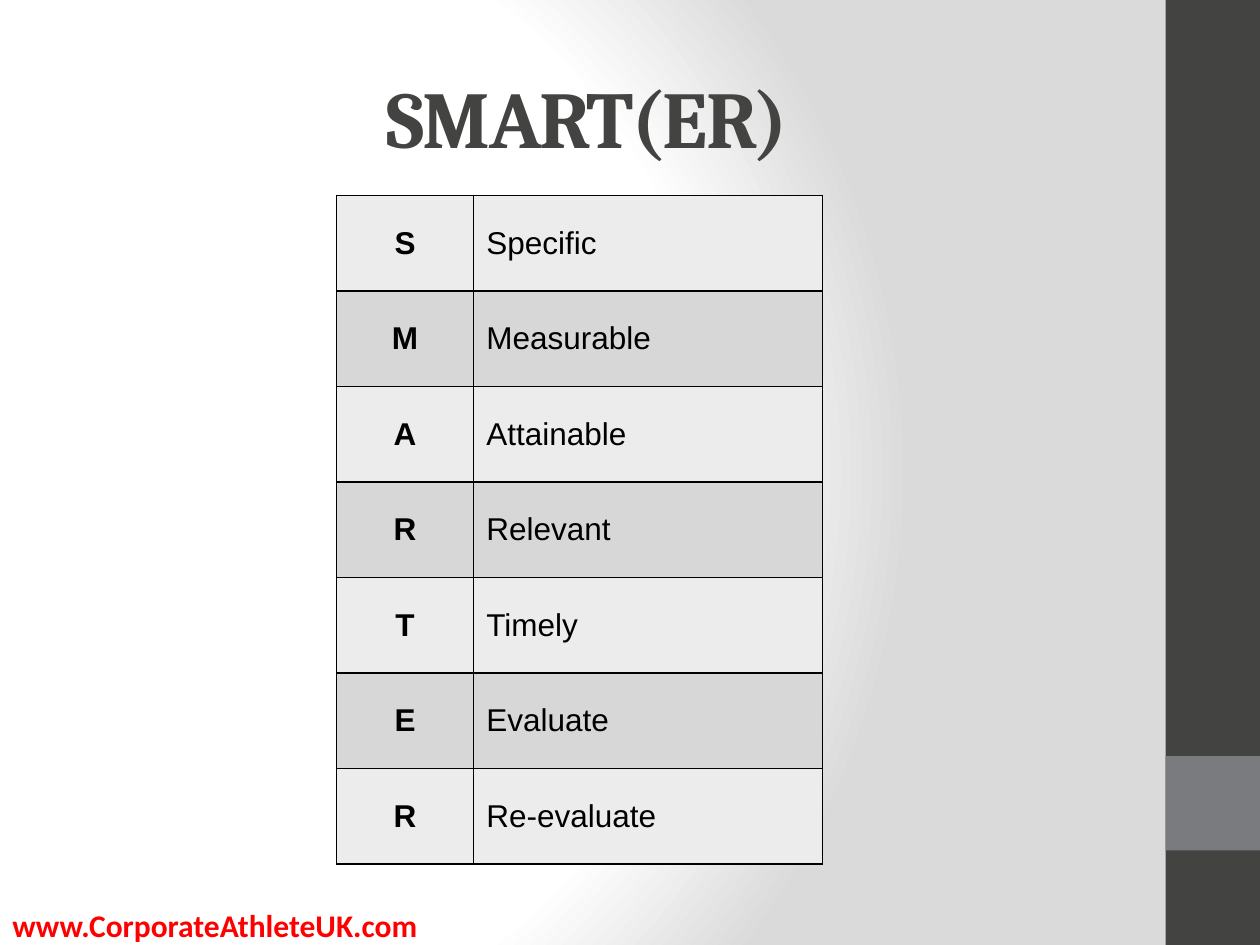
from pptx import Presentation
from pptx.dml.color import RGBColor
from pptx.enum.shapes import MSO_SHAPE
from pptx.enum.text import MSO_ANCHOR, PP_ALIGN
from pptx.oxml import parse_xml
from pptx.oxml.ns import nsdecls, qn
from pptx.util import Inches, Pt

RECT = MSO_SHAPE.RECTANGLE
MIDDLE, TOP = MSO_ANCHOR.MIDDLE, MSO_ANCHOR.TOP
LEFT, CENTER = PP_ALIGN.LEFT, PP_ALIGN.CENTER

TITLE = "SMART(ER)"
SITE = "www.CorporateAthleteUK.com"
STEPS = [
    ("S", "Specific"),
    ("M", "Measurable"),
    ("A", "Attainable"),
    ("R", "Relevant"),
    ("T", "Timely"),
    ("E", "Evaluate"),
    ("R", "Re-evaluate"),
]

WIDE, HIGH = 10, 7.5
UNIT = HIGH / 10
GRID = {"left": 2.67, "top": 1.55, "cols": (1.09, 2.77), "row": 5.31 / len(STEPS)}

THEME = {
    "fade": [(0, "FFFFFF"), (75, "FFFFFF"), (100, "DADADA")],
    "bar": "434342",
    "block": "797B7E",
    "bands": ("ECECEC", "D7D7D8"),
    "line": "000000",
    "title": {"name": "Cambria", "size": Pt(46), "bold": True, "color": "434342"},
    "site": {"name": "Calibri", "size": Pt(18), "bold": True, "color": "FF0000"},
    "key": {"name": "Arial", "size": Pt(18), "bold": True, "color": "000000"},
    "word": {"name": "Arial", "size": Pt(18), "bold": False, "color": "000000"},
}


def rgb(code):
    return RGBColor.from_string(code)


def write(frame, text, style, align=LEFT):
    para = frame.paragraphs[0]
    para.alignment = align
    run = para.add_run()
    run.text = text
    for key, value in THEME[style].items():
        if key == "color":
            run.font.color.rgb = rgb(value)
        else:
            setattr(run.font, key, value)
    return run


def add_text(slide, area, text, style, align=LEFT, anchor=TOP):
    frame = slide.shapes.add_textbox(*map(Inches, area)).text_frame
    frame.word_wrap = True
    frame.vertical_anchor = anchor
    return write(frame, text, style, align)


def add_block(slide, area, color):
    block = slide.shapes.add_shape(RECT, *map(Inches, area))
    block.shadow.inherit = False
    block.fill.solid()
    block.fill.fore_color.rgb = rgb(color)
    block.line.fill.background()


def fade_back(slide):
    """Give the slide a round gradient centred left of its middle."""
    slide.background.fill.gradient()
    old = slide.element.find(".//" + qn("a:gradFill"))
    stops = "".join(
        f'<a:gs pos="{pos * 1000}"><a:srgbClr val="{color}"/></a:gs>'
        for pos, color in THEME["fade"]
    )
    new = parse_xml(
        f'<a:gradFill {nsdecls("a")} rotWithShape="1"><a:gsLst>{stops}</a:gsLst>'
        '<a:path path="circle"><a:fillToRect l="20000" t="50000" r="100000" b="50000"/>'
        "</a:path></a:gradFill>"
    )
    old.getparent().replace(old, new)


def edge_cell(cell):
    """Draw a one-point line on all four sides; lines precede the fill."""
    props = cell._tc.get_or_add_tcPr()
    for spot, side in enumerate(("lnL", "lnR", "lnT", "lnB")):
        props.insert(spot, parse_xml(
            f'<a:{side} {nsdecls("a")} w="{Pt(1)}"><a:solidFill>'
            f'<a:srgbClr val="{THEME["line"]}"/></a:solidFill></a:{side}>'
        ))


def add_steps(slide):
    cols, row = GRID["cols"], GRID["row"]
    area = (GRID["left"], GRID["top"], sum(cols), row * len(STEPS))
    table = slide.shapes.add_table(len(STEPS), len(cols), *map(Inches, area)).table
    table.first_row = False
    for col, width in zip(table.columns, cols):
        col.width = Inches(width)
    looks = (("key", CENTER), ("word", LEFT))
    for r, step in enumerate(STEPS):
        table.rows[r].height = Inches(row)
        for c, (text, (style, align)) in enumerate(zip(step, looks)):
            cell = table.cell(r, c)
            cell.vertical_anchor = MIDDLE
            cell.fill.solid()
            cell.fill.fore_color.rgb = rgb(THEME["bands"][r % 2])
            write(cell.text_frame, text, style, align)
            edge_cell(cell)


def main():
    deck = Presentation()
    deck.slide_width, deck.slide_height = Inches(WIDE), Inches(HIGH)
    slide = deck.slides.add_slide(deck.slide_layouts[6])
    fade_back(slide)
    add_block(slide, (WIDE - UNIT, 0, UNIT, HIGH), THEME["bar"])
    add_block(slide, (WIDE - UNIT, 8 * UNIT, UNIT, UNIT), THEME["block"])
    add_text(slide, (0, 7.14, 4.45, 0.4), SITE, "site")
    title = add_text(slide, (0.5, 0.3, 8.33, 1.25), TITLE, "title", CENTER, MIDDLE)
    title._r.get_or_add_rPr().set("spc", "-100")
    add_steps(slide)
    deck.save("out.pptx")


if __name__ == "__main__":
    main()
